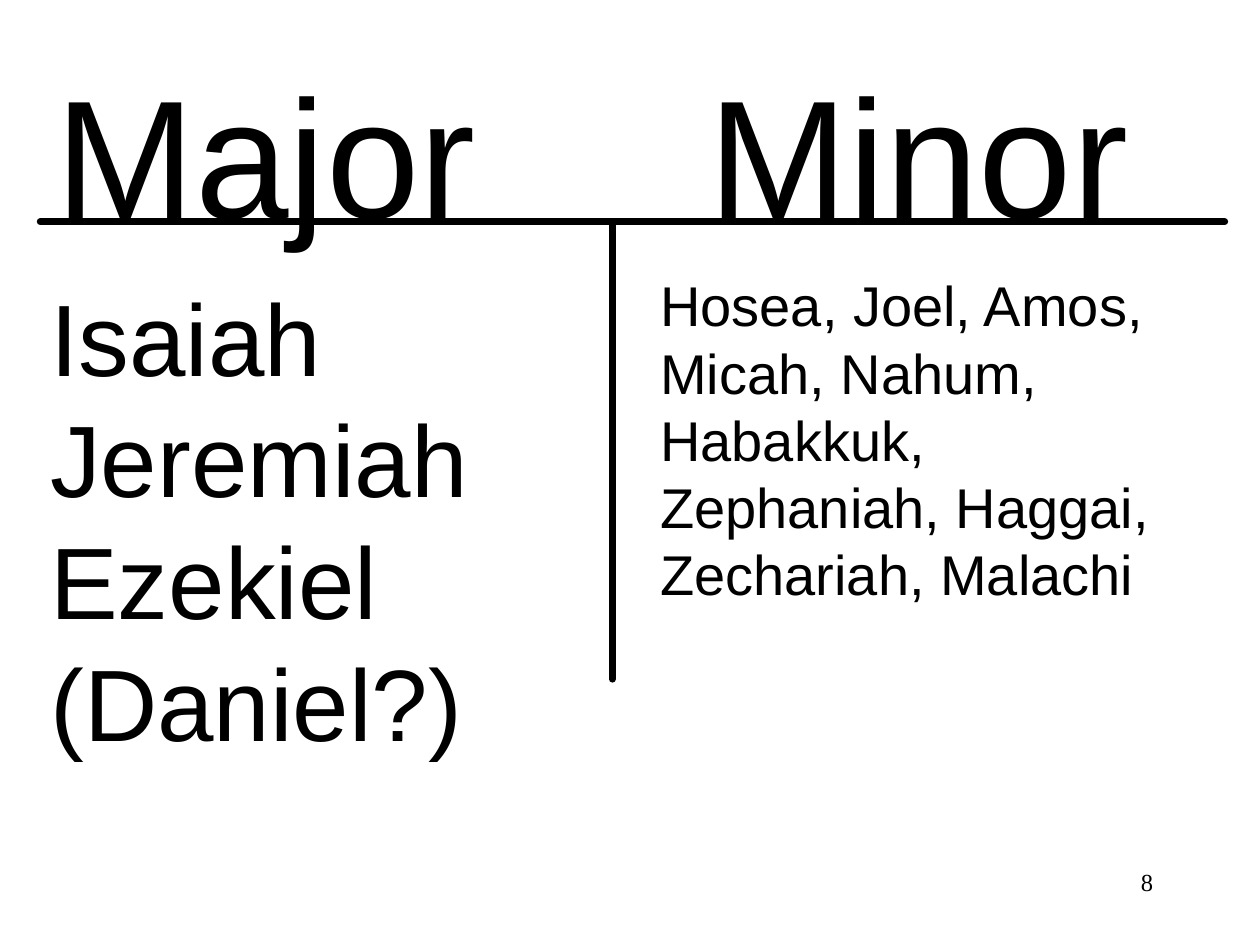
from lxml.etree import SubElement
from pptx import Presentation
from pptx.dml.color import RGBColor
from pptx.enum.shapes import MSO_CONNECTOR
from pptx.enum.text import MSO_ANCHOR, PP_ALIGN
from pptx.oxml.ns import qn
from pptx.util import Inches, Pt

BLACK = RGBColor(0, 0, 0)


def style(box, size, font="Arial", align=PP_ALIGN.LEFT, inset=(0, 0)):
    frame = box.text_frame
    frame.word_wrap = True
    frame.vertical_anchor = MSO_ANCHOR.TOP
    frame.margin_left = frame.margin_right = Inches(inset[0])
    frame.margin_top = frame.margin_bottom = Inches(inset[1])
    for para in frame.paragraphs:
        para.alignment = align
        para.space_before = Pt(0)
        para.line_spacing = Pt(size * 1.2)
        for run in para.runs:
            run.font.size = Pt(size)
            run.font.name = font
            run.font.color.rgb = BLACK


prs = Presentation()
prs.slide_width, prs.slide_height = Inches(10), Inches(7.5)
slide = prs.slides.add_slide(prs.slide_layouts[5])

# Heading: a tab stop places the second column's word
title = slide.shapes.title
title.left, title.top = Inches(0.44), Inches(0.4)
title.width, title.height = Inches(9.2), Inches(1.6)
title.text_frame.text = "Major\tMinor"
props = title.text_frame.paragraphs[0]._p.get_or_add_pPr()
tabs = SubElement(props, qn("a:tabLst"))
SubElement(tabs, qn("a:tab"), pos=str(Inches(5.18)), algn="l")
style(title, 96)

# T-shaped rule
for x1, y1, x2, y2 in [(0.32, 1.76, 9.72, 1.76), (4.86, 1.76, 4.86, 5.39)]:
    rule = slide.shapes.add_connector(
        MSO_CONNECTOR.STRAIGHT, Inches(x1), Inches(y1), Inches(x2), Inches(y2))
    rule.line.color.rgb = BLACK
    rule.line.width = Pt(4)
    rule.line._get_or_add_ln().set("cap", "rnd")
    SubElement(rule._element.spPr, qn("a:effectLst"))

# Columns
major = "Isaiah\nJeremiah\nEzekiel\n(Daniel?)"
minor = ("Hosea, Joel, Amos, Micah, Nahum, Habakkuk, "
         "Zephaniah, Haggai, Zechariah, Malachi")
for left, top, width, height, text, size in [
        (0.4, 2.18, 4.07, 3.45, major, 58),
        (5.24, 2.15, 4.39, 2.42, minor, 32)]:
    box = slide.shapes.add_textbox(
        Inches(left), Inches(top), Inches(width), Inches(height))
    box.text_frame.text = text
    style(box, size)

# Page number
page = slide.shapes.add_textbox(
    Inches(7.17), Inches(6.83), Inches(2.08), Inches(0.5))
page.text_frame.text = "8"
style(page, 14, "Times New Roman", PP_ALIGN.RIGHT, (0.1, 0.05))

prs.save("out.pptx")
